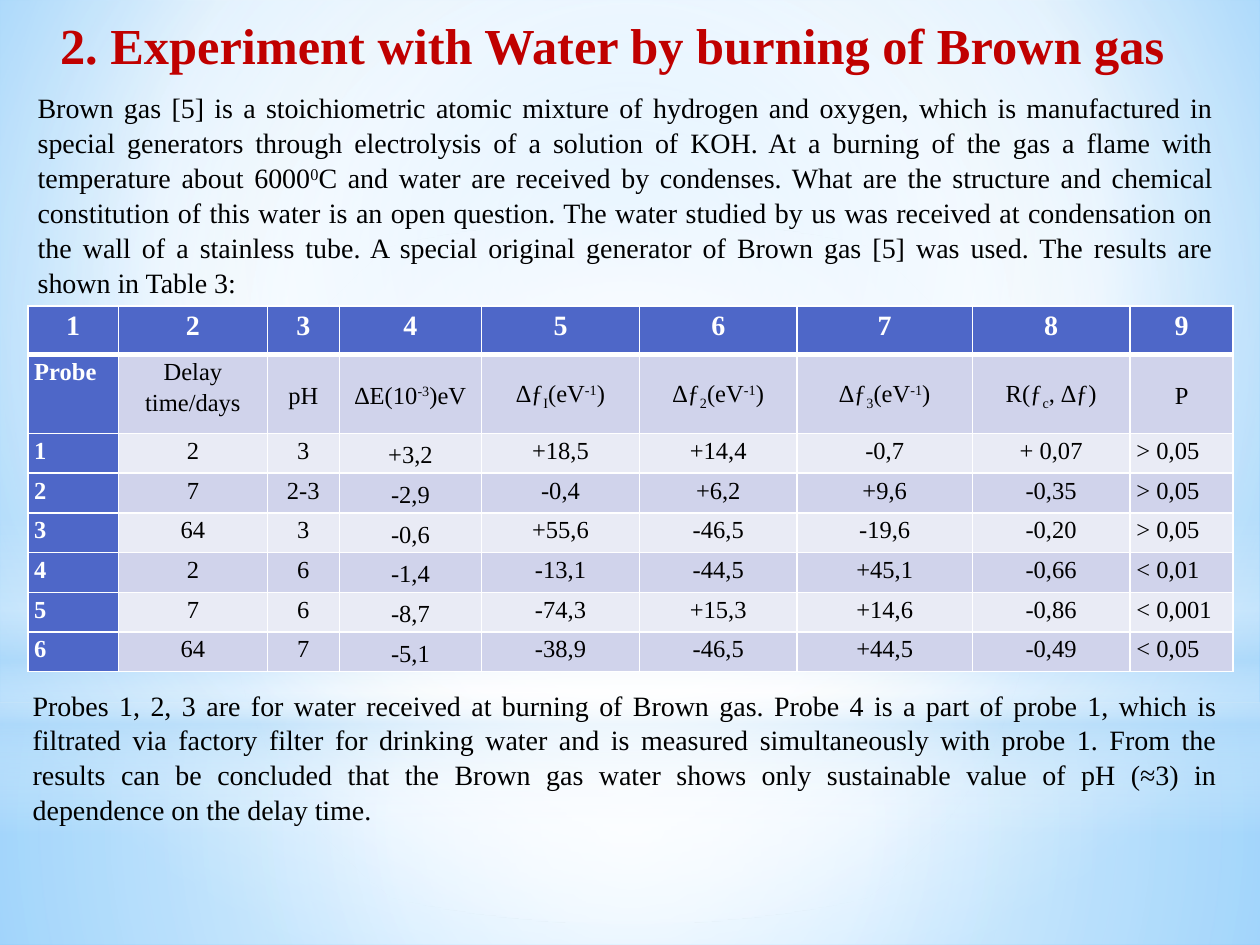
"""Build the slide about the experiment with water from burning Brown gas."""
from lxml.etree import SubElement
from pptx import Presentation
from pptx.dml.color import RGBColor
from pptx.enum.shapes import MSO_SHAPE
from pptx.enum.text import MSO_ANCHOR, MSO_AUTO_SIZE, PP_ALIGN
from pptx.oxml.ns import qn
from pptx.util import Cm, Pt


def write_text(frame, text, size=16, color="000000", bold=False,
               align=PP_ALIGN.JUSTIFY, spacing=1.04):
    """Write text whose parts are split by | and start with ^ or _ when raised or lowered."""
    paragraph = frame.paragraphs[0]
    paragraph.alignment = align
    paragraph.line_spacing = spacing
    for part in text.split("|"):
        run = paragraph.add_run()
        run.text = part.lstrip("^_")
        run.font.name = "Times New Roman"
        run.font.size = Pt(size)
        run.font.bold = bold
        run.font.color.rgb = RGBColor.from_string(color)
        if part[0] in "^_":
            run.font._element.set("baseline", "30000" if part[0] == "^" else "-25000")


def set_gradient(fill, element, stops, focus=None):
    """Give a fill (position, colour, opacity) stops, circular around focus or else vertical."""
    fill.gradient()
    gradient = next(element.iter(qn("a:gradFill")))
    for child in list(gradient):
        gradient.remove(child)
    stop_list = SubElement(gradient, qn("a:gsLst"))
    for position, color, opacity in stops:
        stop = SubElement(stop_list, qn("a:gs"), pos=str(position * 1000))
        color_element = SubElement(stop, qn("a:srgbClr"), val=color)
        if opacity < 100:
            SubElement(color_element, qn("a:alpha"), val=str(opacity * 1000))
    if focus:
        path = SubElement(gradient, qn("a:path"), path="circle")
        sides = {side: str(value * 1000) for side, value in zip("ltrb", focus)}
        SubElement(path, qn("a:fillToRect"), **sides)
    else:
        SubElement(gradient, qn("a:lin"), ang="5400000", scaled="0")


presentation = Presentation()
presentation.slide_width = Cm(25.4)
presentation.slide_height = Cm(19.05)
slide = presentation.slides.add_slide(presentation.slide_layouts[5])
set_gradient(slide.background.fill, slide._element,
             [(0, "9ED5FF", 100), (60, "FFFFFF", 100), (100, "5BB9FF", 100)],
             (20, 10, 20, 60))

center = (50, 50, 50, 50)
glows = [
    (MSO_SHAPE.RECTANGLE, 14.17, 4.88, center,
     [(0, "FFFFFF", 91), (37, "FFFFFF", 76), (100, "B4DCFA", 79)]),
    (MSO_SHAPE.RECTANGLE, 0, 14.17, center,
     [(0, "FFFFFF", 89), (48, "FFFFFF", 62), (100, "B4DCFA", 79)]),
    (MSO_SHAPE.RECTANGLE, 10.46, 6.35, None,
     [(0, "FFFFFF", 0), (29, "FFFFFF", 30), (45, "B4DCFA", 40),
      (55, "FFFFFF", 26), (65, "B4DCFA", 60), (100, "FFFFFF", 0)]),
    (MSO_SHAPE.OVAL, 4.45, 14.17, center,
     [(0, "FFFFFF", 100), (56, "FFFFFF", 0)]),
]
for kind, top, height, focus, stops in glows:
    shape = slide.shapes.add_shape(kind, 0, Cm(top), presentation.slide_width, Cm(height))
    shape.shadow.inherit = False
    shape.line.fill.background()
    set_gradient(shape.fill, shape._element, stops, focus)

title = slide.shapes.title
slide.shapes._spTree.append(title._element)
title.left, title.top, title.width, title.height = Cm(0.51), Cm(0.05), Cm(23.67), Cm(1.68)
title.text_frame.auto_size = MSO_AUTO_SIZE.NONE
title.text_frame.vertical_anchor = MSO_ANCHOR.MIDDLE
write_text(title.text_frame, "2. Experiment with Water by burning of Brown gas",
           size=28.8, color="C00000", bold=True, align=PP_ALIGN.CENTER, spacing=1.0)

rows = [
    ["1", "2", "3", "4", "5", "6", "7", "8", "9"],
    ["Probe", "Delay time/days", "pH", "∆E(10|^-3|)eV", "∆ƒ|_I|(eV|^-1|)",
     "∆ƒ|_2|(eV|^-1|)", "∆ƒ|_3|(eV|^-1|)", "R(ƒ|_c|, ∆ƒ)", "P"],
    ["1", "2", "3", "+3,2", "+18,5", "+14,4", "-0,7", "+ 0,07", "> 0,05"],
    ["2", "7", "2-3", "-2,9", "-0,4", "+6,2", "+9,6", "-0,35", "> 0,05"],
    ["3", "64", "3", "-0,6", "+55,6", "-46,5", "-19,6", "-0,20", "> 0,05"],
    ["4", "2", "6", "-1,4", "-13,1", "-44,5", "+45,1", "-0,66", "< 0,01"],
    ["5", "7", "6", "-8,7", "-74,3", "+15,3", "+14,6", "-0,86", "< 0,001"],
    ["6", "64", "7", "-5,1", "-38,9", "-46,5", "+44,5", "-0,49", "< 0,05"],
]
column_widths = [1.83, 3, 1.45, 2.87, 3.18, 3.18, 3.53, 3.18, 2.08]
row_heights = [0.97, 1.6] + [0.8] * 6
table = slide.shapes.add_table(len(rows), len(column_widths), Cm(0.56), Cm(6.17),
                               Cm(sum(column_widths)), Cm(sum(row_heights))).table
table.first_col = True
for column, width in zip(table.columns, column_widths):
    column.width = Cm(width)
for row, height in zip(table.rows, row_heights):
    row.height = Cm(height)

for row_index, row in enumerate(rows):
    for column_index, text in enumerate(row):
        cell = table.cell(row_index, column_index)
        cell.margin_left = cell.margin_right = Cm(0.13)
        cell.margin_top = cell.margin_bottom = 0
        is_header = row_index == 0
        is_accent = is_header or column_index == 0
        is_labels = row_index == 1 and column_index > 1
        is_left = not is_header and (column_index == 0 or column_index == 8 and row_index > 1)
        is_middle = is_labels or column_index == 3 and not is_header
        cell.vertical_anchor = MSO_ANCHOR.MIDDLE if is_middle else MSO_ANCHOR.TOP
        for side in "LRTB":
            is_thick = (row_index, side) in ((0, "B"), (1, "T"))
            border = SubElement(cell._tc.get_or_add_tcPr(), qn("a:ln" + side),
                                w=str(Pt(3 if is_thick else 1)))
            border_fill = SubElement(border, qn("a:solidFill"))
            SubElement(border_fill, qn("a:srgbClr"), val="FFFFFF")
        band = "D0D3EB" if row_index % 2 else "E9EBF5"
        cell.fill.solid()
        cell.fill.fore_color.rgb = RGBColor.from_string("4E67C8" if is_accent else band)
        write_text(cell.text_frame, text, size=16 if is_header else 14,
                   color="FFFFFF" if is_accent else "000000", bold=is_accent,
                   align=PP_ALIGN.JUSTIFY if is_left else PP_ALIGN.CENTER, spacing=1.15)

introduction = (
    "Brown gas [5] is a stoichiometric atomic mixture of hydrogen and oxygen, which is "
    "manufactured in special generators through electrolysis of a solution of KOH. At a "
    "burning of the gas a flame with temperature about 6000|^0|C and water are received by "
    "condenses. What are the structure and chemical constitution of this water is an open "
    "question. The water studied by us was received at condensation on the wall of a "
    "stainless tube. A special original generator of Brown gas [5] was used. The results "
    "are shown in Table 3:")
conclusion = (
    "Probes 1, 2, 3 are for water received at burning of Brown gas. Probe 4 is a part of "
    "probe 1, which is filtrated via factory filter for drinking water and is measured "
    "simultaneously with probe 1. From the results can be concluded that the Brown gas "
    "water shows only sustainable value of pH (≈3) in dependence on the delay time.")
for text, left, top, width, height, anchor in [
    (introduction, 0.51, 1.73, 24.2, 4.37, MSO_ANCHOR.MIDDLE),
    (conclusion, 0.41, 13.72, 24.38, 3, MSO_ANCHOR.TOP),
]:
    box = slide.shapes.add_textbox(Cm(left), Cm(top), Cm(width), Cm(height))
    box.text_frame.word_wrap = True
    box.text_frame.auto_size = MSO_AUTO_SIZE.SHAPE_TO_FIT_TEXT
    box.text_frame.vertical_anchor = anchor
    write_text(box.text_frame, text)

presentation.save("out.pptx")
